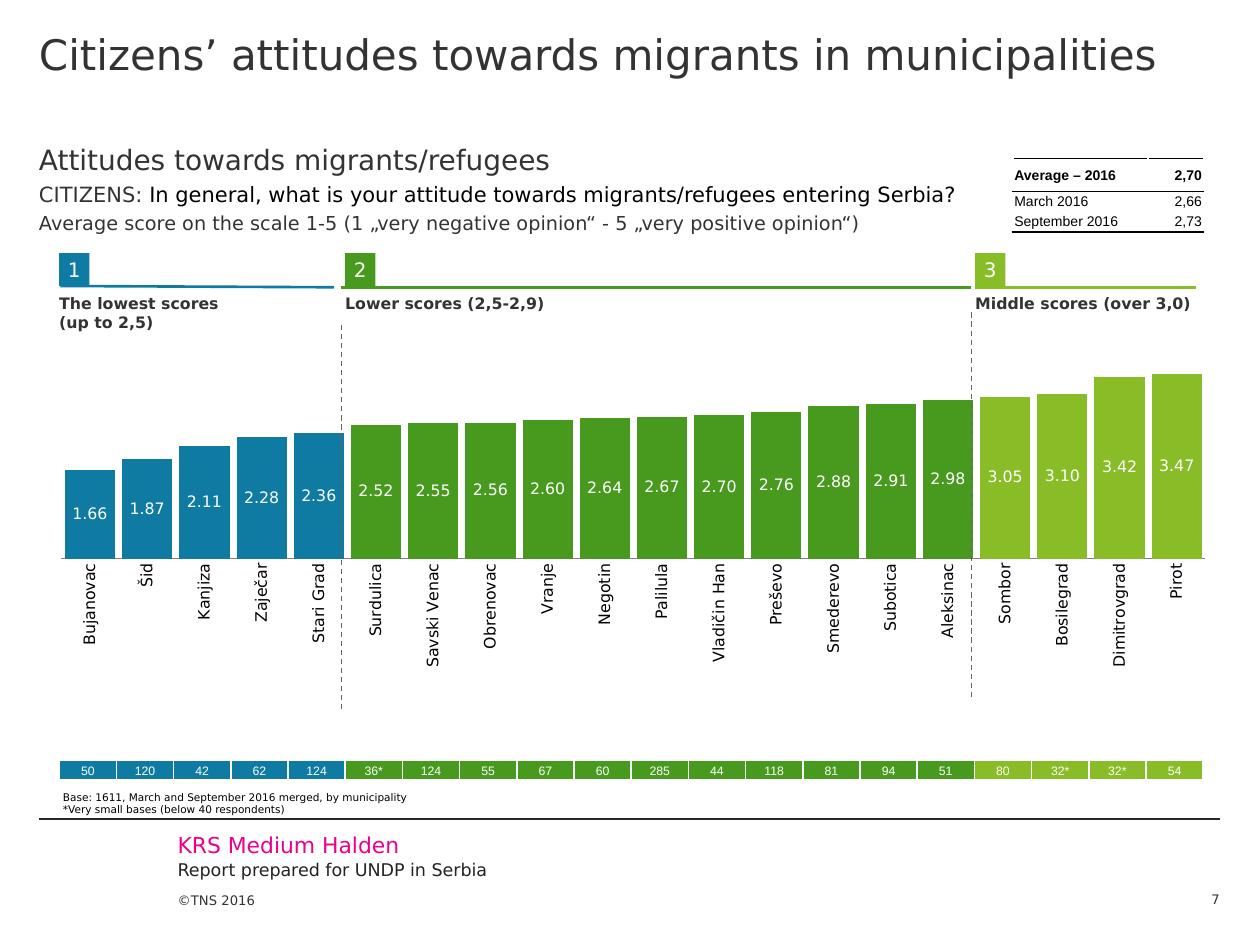
from lxml import etree
from pptx import Presentation
from pptx.chart.data import CategoryChartData
from pptx.dml.color import RGBColor
from pptx.enum.chart import XL_CHART_TYPE, XL_TICK_MARK
from pptx.enum.dml import MSO_LINE
from pptx.enum.shapes import MSO_CONNECTOR, MSO_SHAPE
from pptx.enum.text import MSO_ANCHOR, PP_ALIGN
from pptx.oxml import parse_xml
from pptx.oxml.ns import nsdecls, qn
from pptx.util import Inches, Pt

STACKED = XL_CHART_TYPE.COLUMN_STACKED
NO_TICK = XL_TICK_MARK.NONE
DASH = MSO_LINE.DASH
LINE = MSO_CONNECTOR.STRAIGHT
RECT = MSO_SHAPE.RECTANGLE
TOP, MIDDLE, BOTTOM = MSO_ANCHOR.TOP, MSO_ANCHOR.MIDDLE, MSO_ANCHOR.BOTTOM
LEFT, CENTER, RIGHT = PP_ALIGN.LEFT, PP_ALIGN.CENTER, PP_ALIGN.RIGHT

HEX = {"blue": "0F7BA2", "green": "489A1E", "lime": "89BD27", "white": "FFFFFF",
       "black": "000000", "text": "333333", "dark": "232323", "rule": "262626",
       "dash": "666666", "axis": "808080", "pink": "EC008C"}
SANS, ARIAL = "DejaVu Sans", "Arial"
TONES = ["blue"] * 5 + ["green"] * 11 + ["lime"] * 4
SCORES = {"Bujanovac": 1.66, "Šid": 1.87, "Kanjiza": 2.11, "Zaječar": 2.28,
          "Stari Grad": 2.36, "Surdulica": 2.52, "Savski Venac": 2.55,
          "Obrenovac": 2.56, "Vranje": 2.6, "Negotin": 2.64, "Palilula": 2.67,
          "Vladičin Han": 2.7, "Preševo": 2.76, "Smederevo": 2.88,
          "Subotica": 2.91, "Aleksinac": 2.98, "Sombor": 3.05,
          "Bosilegrad": 3.1, "Dimitrovgrad": 3.42, "Pirot": 3.47}
BASES = ["50", "120", "42", "62", "124", "36*", "124", "55", "67", "60", "285",
         "44", "118", "81", "94", "51", "80", "32*", "32*", "54"]
MEANS = [("Average – 2016", "2,70"), ("March 2016", "2,66"), ("September 2016", "2,73")]
GROUPS = [
    (0.47, 0.01, 2.18, -0.01, "blue", ["The lowest scores", "(up to 2,5)"]),
    (2.74, -0.03, 4.97, 0, "green", ["Lower scores (2,5-2,9)"]),
    (7.74, 0, 1.75, 0, "lime", ["Middle scores (over 3,0)"]),
]


def rgb(tone):
    return RGBColor.from_string(HEX[tone])


def style(font, size, tone, face=SANS, bold=False):
    font.size, font.name, font.bold = Pt(size), face, bold
    font.color.rgb = rgb(tone)


def inset(frame, left=0, top=0, right=0, bottom=0):
    frame.margin_left, frame.margin_top = Inches(left), Inches(top)
    frame.margin_right, frame.margin_bottom = Inches(right), Inches(bottom)


def write(frame, lines, size, tone, face=SANS, bold=False, align=LEFT):
    for i, line in enumerate(lines):
        para = frame.add_paragraph() if i else frame.paragraphs[0]
        para.text, para.alignment = line, align
        style(para.font, size, tone, face, bold)


def add_text(slide, box, lines, size, tone, bold=False, align=LEFT, anchor=TOP):
    frame = slide.shapes.add_textbox(*map(Inches, box)).text_frame
    frame.word_wrap, frame.vertical_anchor = True, anchor
    inset(frame)
    write(frame, lines, size, tone, bold=bold, align=align)
    return frame


def add_line(slide, ends, tone, width, dash=None):
    line = slide.shapes.add_connector(LINE, *map(Inches, ends))
    line.line.color.rgb, line.line.width = rgb(tone), Pt(width)
    if dash:
        line.line.dash_style = dash
    etree.SubElement(line._element.spPr, qn("a:effectLst"))


def add_grid(slide, box, cols, rows):
    shape = slide.shapes.add_table(len(rows), len(cols), *map(Inches, box))
    table = shape.table
    table.first_row = table.horz_banding = False
    for col, width in zip(table.columns, cols):
        col.width = Inches(width)
    for row, height in zip(table.rows, rows):
        row.height = Inches(height)
    return table


def fill_cell(cell, text, size, tone, fill, edges, bold=False, align=LEFT):
    cell.vertical_anchor = MIDDLE
    inset(cell, 0.01, 0.01, 0.01)
    write(cell.text_frame, [text], size, tone, ARIAL, bold, align)
    cell.fill.solid()
    cell.fill.fore_color.rgb = rgb(fill)
    for i, (side, (edge, width)) in enumerate(zip("LRTB", edges)):
        cell._tc.get_or_add_tcPr().insert(i, parse_xml(
            f'<a:ln{side} {nsdecls("a")} w="{Pt(width)}"><a:solidFill>'
            f'<a:srgbClr val="{HEX[edge]}"/></a:solidFill></a:ln{side}>'))


def add_head(slide, box):
    x, y, w, h = box
    add_text(slide, (x, y + 0.23, w, 0.9), [
        "Citizens’ attitudes towards migrants in municipalities"], 24, "text")
    frame = add_text(slide, (x, y + 1.13, w, h - 1.13), [
        "Attitudes towards migrants/refugees", "CITIZENS: ",
        "Average score on the scale 1-5 (1 „very negative opinion“ - 5 „very positive opinion“)",
    ], 16, "text")
    ask, note = frame.paragraphs[1:]
    run = ask.add_run()
    run.text = "In general, what is your attitude towards migrants/refugees entering Serbia?"
    run.font.color.rgb = rgb("black")
    for para, size in ((ask, 12), (note, 11)):
        para.font.size, para.space_before = Pt(size), Pt(3)


def add_bars(slide, box):
    data = CategoryChartData(number_format="#,##0.00")
    data.categories = list(SCORES)
    data.add_series("Series 1", list(SCORES.values()))
    chart = slide.shapes.add_chart(STACKED, *map(Inches, box), data).chart
    chart.has_legend = chart.has_title = False
    style(chart.font, 9, "black")
    cat, val = chart.category_axis, chart.value_axis
    cat.major_tick_mark = NO_TICK
    cat.format.line.color.rgb = rgb("axis")
    style(cat.tick_labels.font, 9, "black")
    cat._element.txPr.find(qn("a:bodyPr")).set("rot", "-5400000")
    val.minimum_scale, val.maximum_scale = 0, 4
    val.has_major_gridlines = val.visible = False
    plot = chart.plots[0]
    plot.gap_width, plot.overlap, plot.vary_by_categories = 14, 100, False
    plot.has_data_labels = True
    labels = plot.data_labels
    labels.show_value = True
    labels.number_format, labels.number_format_is_linked = "#,##0.00", False
    style(labels.font, 9, "white")
    for i, tone in enumerate(TONES):
        fill = plot.series[0].points[i].format.fill
        fill.solid()
        fill.fore_color.rgb = rgb(tone)
    area = chart._chartSpace.chart.plotArea
    for old in area.findall(qn("c:layout")):
        area.remove(old)
    spots = {"x": 0.019, "y": 0.016, "w": 0.969, "h": 0.467}
    marks = "".join(f'<c:{k}Mode val="edge"/>' for k in "xy")
    marks += "".join(f'<c:{k} val="{v}"/>' for k, v in spots.items())
    area.insert(0, parse_xml(
        f'<c:layout {nsdecls("c")}><c:manualLayout><c:layoutTarget val="inner"/>'
        f'{marks}</c:manualLayout></c:layout>'))


def add_group(slide, box, num, start, rise, tone, lines):
    x, y, w, h = box
    add_line(slide, (x + w, y + h, x + start, y + h + rise), tone, 1.5)
    tag = slide.shapes.add_shape(RECT, *map(Inches, (x, y, 0.24, 0.26)))
    tag.shadow.inherit = False
    tag.fill.solid()
    tag.fill.fore_color.rgb = rgb(tone)
    tag.line.fill.background()
    frame = tag.text_frame
    frame.word_wrap, frame.vertical_anchor = False, MIDDLE
    inset(frame)
    write(frame, [str(num)], 11.4, "white", align=CENTER)
    add_text(slide, (x, y + 0.32, 1.96, 0.15 * len(lines)), lines, 9, "text", bold=True)


def add_bases(slide, box):
    x, y, w, h = box
    notes = add_grid(slide, (x + 0.01, y + 0.11, 8.32, 0.34), [8.32], [0.14, 0.2])
    for row, lines in enumerate(([""], [
            "Base: 1611, March and September 2016 merged, by municipality",
            "*Very small bases (below 40 respondents)"])):
        cell = notes.cell(row, 0)
        cell.fill.background()
        cell.vertical_anchor = MIDDLE
        inset(cell, 0.02, 0, 0.02)
        write(cell.text_frame, lines, 6, "black")
    table = add_grid(slide, box, [w / len(BASES)] * len(BASES), [h])
    edges = [("white", 1)] * 3 + [("white", 3)]
    for cell, text, tone in zip(table.iter_cells(), BASES, TONES):
        fill_cell(cell, text, 7, "white", tone, edges, align=CENTER)


def add_means(slide, box):
    table = add_grid(slide, box, [1.07, 0.44], [0.26, 0.15, 0.17])
    rims = [("black", "black"), ("black", "white"), ("white", "black")]
    for r, (row, (top, base)) in enumerate(zip(MEANS, rims)):
        edges = [("white", 1), ("white", 1), (top, 1), (base, 1)]
        for c, text in enumerate(row):
            fill_cell(table.cell(r, c), text, 8, "black", "white", edges,
                      bold=r == 0, align=RIGHT if c else LEFT)


def add_foot(slide, box):
    x, y, w, h = box
    add_line(slide, (x, y, x + w, y), "rule", 0.75)
    left = x + 1.1
    add_text(slide, (left, y + 0.1, 3.31, 0.21), ["KRS Medium Halden"], 12.5, "pink")
    add_text(slide, (left, y + 0.32, 6.81, 0.18), [
        "Report prepared for UNDP in Serbia"], 10, "dark")
    add_text(slide, (left, y + 0.42, 0.83, h - 0.42), ["©TNS 2016"], 7.5, "text", anchor=BOTTOM)
    add_text(slide, (x + w - 0.55, y + 0.42, 0.55, h - 0.43), ["7"], 7.5, "text",
             align=RIGHT, anchor=BOTTOM)


def main():
    deck = Presentation()
    deck.slide_width, deck.slide_height = Inches(10), Inches(7.5)
    slide = deck.slides.add_slide(deck.slide_layouts[6])
    add_foot(slide, (0.31, 6.5, 9.37, 0.71))
    add_bars(slide, (0.31, 2.69, 9.37, 3.61))
    add_head(slide, (0.31, 0, 9.37, 1.95))
    for num, (x, start, w, rise, tone, lines) in enumerate(GROUPS, 1):
        add_group(slide, (x, 2.01, w, 0.27), num, start, rise, tone, lines)
    add_bases(slide, (0.47, 6.03, 9.08, 0.17))
    for x, top, end in ((2.71, 2.58, 5.63), (7.71, 2.48, 5.53)):
        add_line(slide, (x, top, x, end), "dash", 0.75, DASH)
    add_means(slide, (8.04, 1.26, 1.51, 0.58))
    deck.save("out.pptx")


if __name__ == "__main__":
    main()
